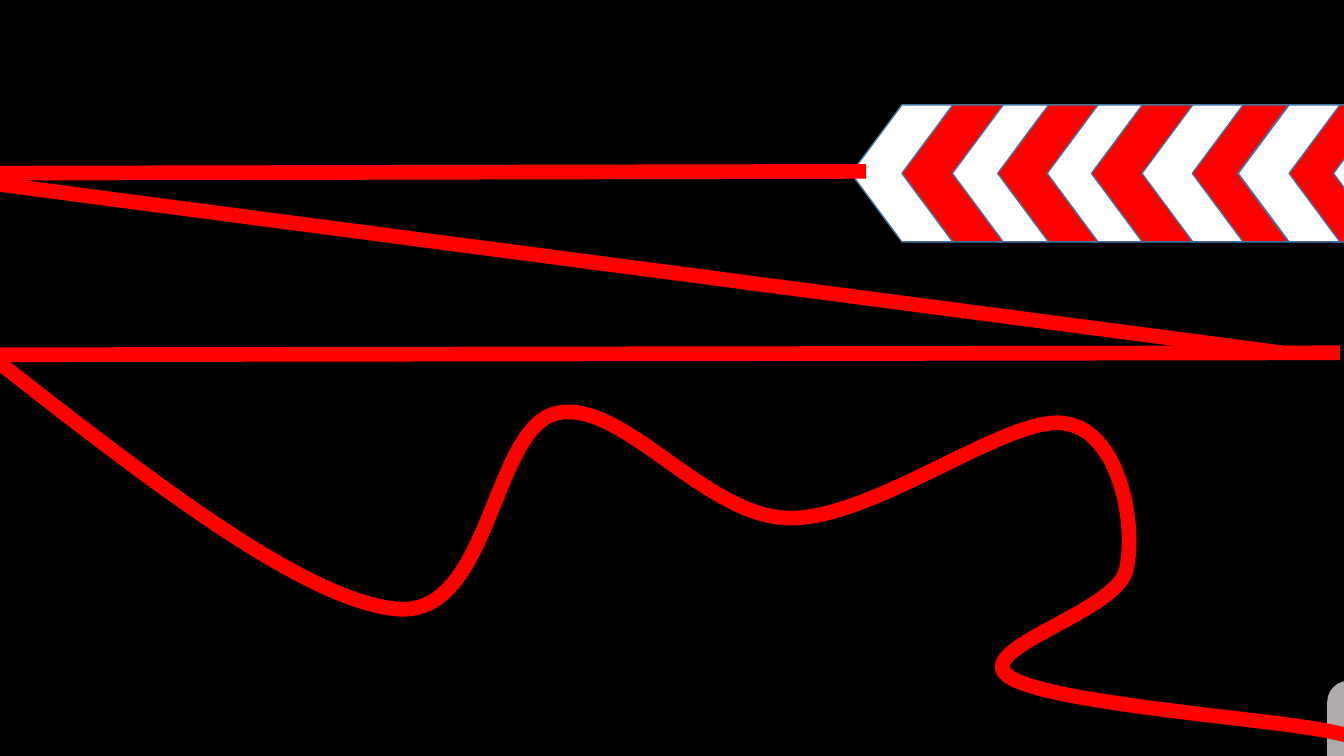
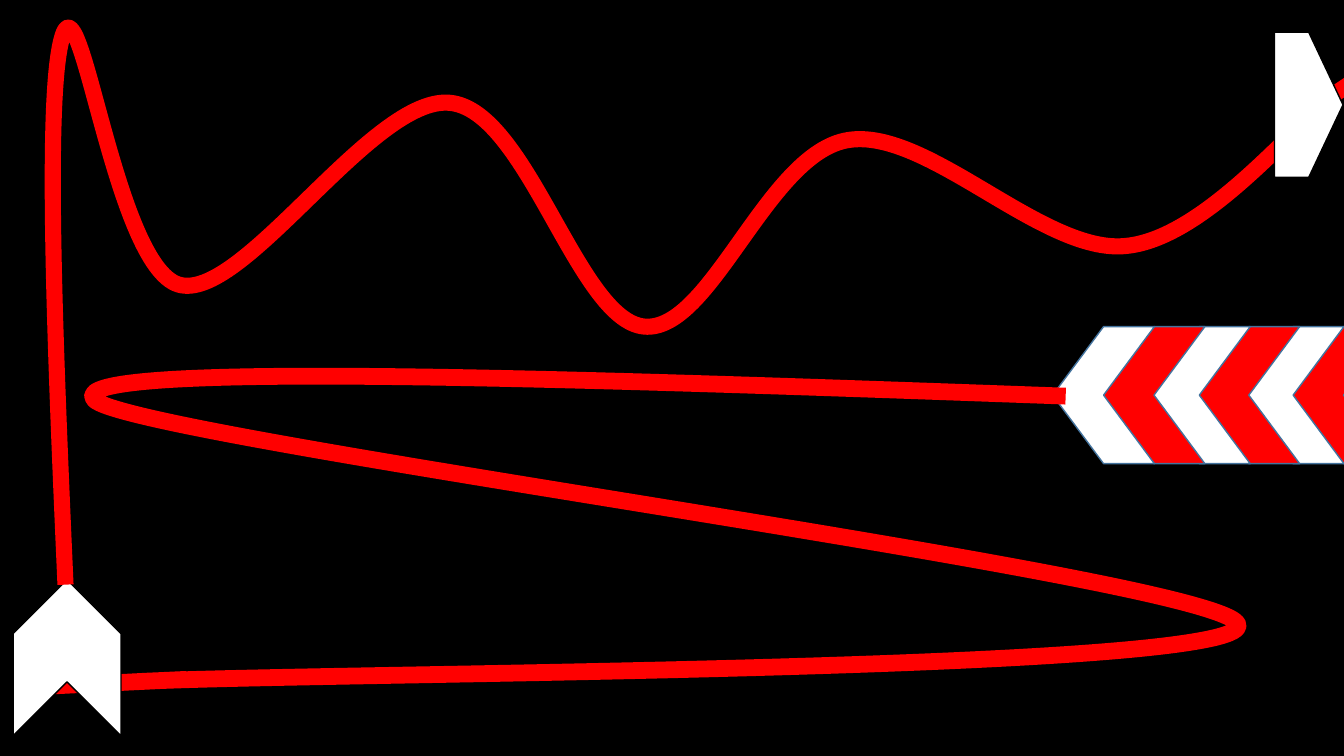
from lxml.etree import SubElement
from pptx import Presentation
from pptx.dml.color import RGBColor
from pptx.enum.shapes import MSO_CONNECTOR, MSO_SHAPE
from pptx.oxml.ns import qn
from pptx.util import Inches, Pt

BLACK = RGBColor(0x00, 0x00, 0x00)
WHITE = RGBColor(0xFF, 0xFF, 0xFF)
RED = RGBColor(0xFF, 0x00, 0x00)
EDGE_BLUE = RGBColor(0x43, 0x73, 0x9E)
GREY = RGBColor(0xAF, 0xAB, 0xAB)

# Chevron offsets from the tip of the band; colours alternate from the tip
CHEVRON_OFFSETS = [0, 0.5, 0.95, 1.44, 1.88, 2.38, 2.88, 3.33, 3.84, 4.28, 4.78]
CHEVRON_SIZE = (1.01, 1.36)
CHEVRON_COLOURS = (WHITE, RED)

# Each curve is a start point and cubic segments (two controls, one end)
TRACK_LINES = [((8.59, 1.7), (-0.89, 1.72)), ((12.72, 3.5), (-0.99, 1.7))]
FINAL_LINE = ((13.29, 3.5), (-0.15, 3.52))
WINDING_TRACK = ((-0.16, 3.48), [
    ((1.41, 4.71), (2.98, 5.94), (3.92, 6.04)),
    ((4.87, 6.15), (4.87, 4.25), (5.52, 4.1)),
    ((6.17, 3.95), (6.98, 5.12), (7.82, 5.14)),
    ((8.66, 5.16), (10, 4.11), (10.56, 4.2)),
    ((11.12, 4.28), (11.27, 5.24), (11.17, 5.65)),
    ((11.08, 6.07), (9.66, 6.43), (9.99, 6.7)),
    ((10.32, 6.97), (12.48, 7.12), (13.16, 7.25)),
    ((13.83, 7.39), (13.9, 7.46), (14.05, 7.5)),
    ((14.2, 7.54), (14.12, 7.51), (14.05, 7.48)),
])
RETURN_LOOP = ((10.57, 3.93), [
    ((5.61, 3.75), (0.64, 3.58), (0.93, 3.96)),
    ((1.21, 4.34), (12.2, 5.74), (12.28, 6.2)),
    ((12.36, 6.67), (3.15, 6.67), (1.41, 6.76)),
    ((-0.33, 6.85), (0.76, 6.79), (1.85, 6.74)),
])
WAVE_TRACK = ((0.65, 5.8), [
    ((0.54, 3.31), (0.44, 0.83), (0.63, 0.33)),
    ((0.82, -0.16), (1.16, 2.72), (1.8, 2.83)),
    ((2.44, 2.95), (3.7, 0.95), (4.46, 1.02)),
    ((5.23, 1.09), (5.73, 3.18), (6.39, 3.24)),
    ((7.05, 3.3), (7.61, 1.52), (8.41, 1.39)),
    ((9.2, 1.26), (10.35, 2.53), (11.17, 2.44)),
    ((11.98, 2.36), (12.91, 1.15), (13.3, 0.89)),
    ((13.68, 0.63), (13.42, 0.89), (13.48, 0.91)),
    ((13.54, 0.93), (13.65, 1.05), (13.65, 1.02)),
    ((13.65, 0.99), (13.55, 0.87), (13.46, 0.74)),
])


def add_slide(prs, background):
    slide = prs.slides.add_slide(prs.slide_layouts[6])
    slide.background.fill.solid()
    slide.background.fill.fore_color.rgb = background
    return slide.shapes


def set_line(shape, colour, width):
    shape.line.color.rgb = colour
    shape.line.width = Pt(width)


def add_block(shapes, preset, box, fill, edge, width=1, rotation=0):
    block = shapes.add_shape(preset, *map(Inches, box))
    block.shadow.inherit = False
    block.rotation = rotation
    block.fill.solid()
    block.fill.fore_color.rgb = fill
    set_line(block, edge, width)


def add_chevron_band(shapes, tip, top, count):
    for i in reversed(range(count)):
        box = (tip + CHEVRON_OFFSETS[i], top, *CHEVRON_SIZE)
        add_block(shapes, MSO_SHAPE.CHEVRON, box, CHEVRON_COLOURS[i % 2], EDGE_BLUE, rotation=180)


def add_track_line(shapes, start, end):
    ends = map(Inches, (*start, *end))
    track = shapes.add_connector(MSO_CONNECTOR.STRAIGHT, *ends)
    set_line(track, RED, 10.5)
    SubElement(track._element.spPr, qn("a:effectLst"))


def bezier_point(knots, t):
    weights = ((1 - t) ** 3, 3 * t * (1 - t) ** 2, 3 * t * t * (1 - t), t ** 3)
    return tuple(Inches(sum(w * knot[axis] for w, knot in zip(weights, knots)))
                 for axis in (0, 1))


def add_track_curve(shapes, start, segments, width, steps=16):
    """Size the freeform from sampled points, then make its path true cubic curves."""
    samples, origin = [], start
    for segment in segments:
        samples += [bezier_point((origin, *segment), n / steps) for n in range(1, steps + 1)]
        origin = segment[-1]
    builder = shapes.build_freeform(*map(Inches, start))
    builder.add_line_segments(samples, close=False)
    track = builder.convert_to_shape()

    outline = track._element.spPr.find(".//" + qn("a:path"))
    for straight in outline.findall(qn("a:lnTo")):
        outline.remove(straight)
    for segment in segments:
        cubic = SubElement(outline, qn("a:cubicBezTo"))
        for x, y in segment:
            SubElement(cubic, qn("a:pt"), x=str(Inches(x) - track.left),
                       y=str(Inches(y) - track.top))
    track.shadow.inherit = False
    track.fill.background()
    set_line(track, RED, width)


def build_straight_slide(prs):
    shapes = add_slide(prs, BLACK)
    add_block(shapes, MSO_SHAPE.RECTANGLE, (-1.44, -0.15, 15.12, 8.13), BLACK, BLACK, 10.5)
    add_block(shapes, MSO_SHAPE.ROUNDED_RECTANGLE, (13.17, 6.76, 1.24, 1.48), GREY, GREY)
    add_chevron_band(shapes, 8.44, 1.04, len(CHEVRON_OFFSETS))
    for start, end in TRACK_LINES:
        add_track_line(shapes, start, end)
    add_track_curve(shapes, *WINDING_TRACK, 10.5)
    add_track_line(shapes, *FINAL_LINE)


def build_wave_slide(prs):
    shapes = add_slide(prs, WHITE)
    add_block(shapes, MSO_SHAPE.RECTANGLE, (-1.83, -1.07, 17.56, 10.41), BLACK, BLACK, 11.5)
    add_chevron_band(shapes.add_group_shape().shapes, 10.44, 3.24, 6)
    add_track_curve(shapes, *RETURN_LOOP, 12)
    add_block(shapes, MSO_SHAPE.CHEVRON, (-0.11, 5.99, 1.55, 1.07), WHITE, BLACK, rotation=270)
    add_track_curve(shapes, *WAVE_TRACK, 11.5)
    add_block(shapes, MSO_SHAPE.PENTAGON, (12.64, 0.32, 0.68, 1.44), WHITE, BLACK)


def main():
    prs = Presentation()
    prs.slide_width, prs.slide_height = Inches(13.33), Inches(7.5)
    build_straight_slide(prs)
    build_wave_slide(prs)
    prs.save("out.pptx")


if __name__ == "__main__":
    main()
